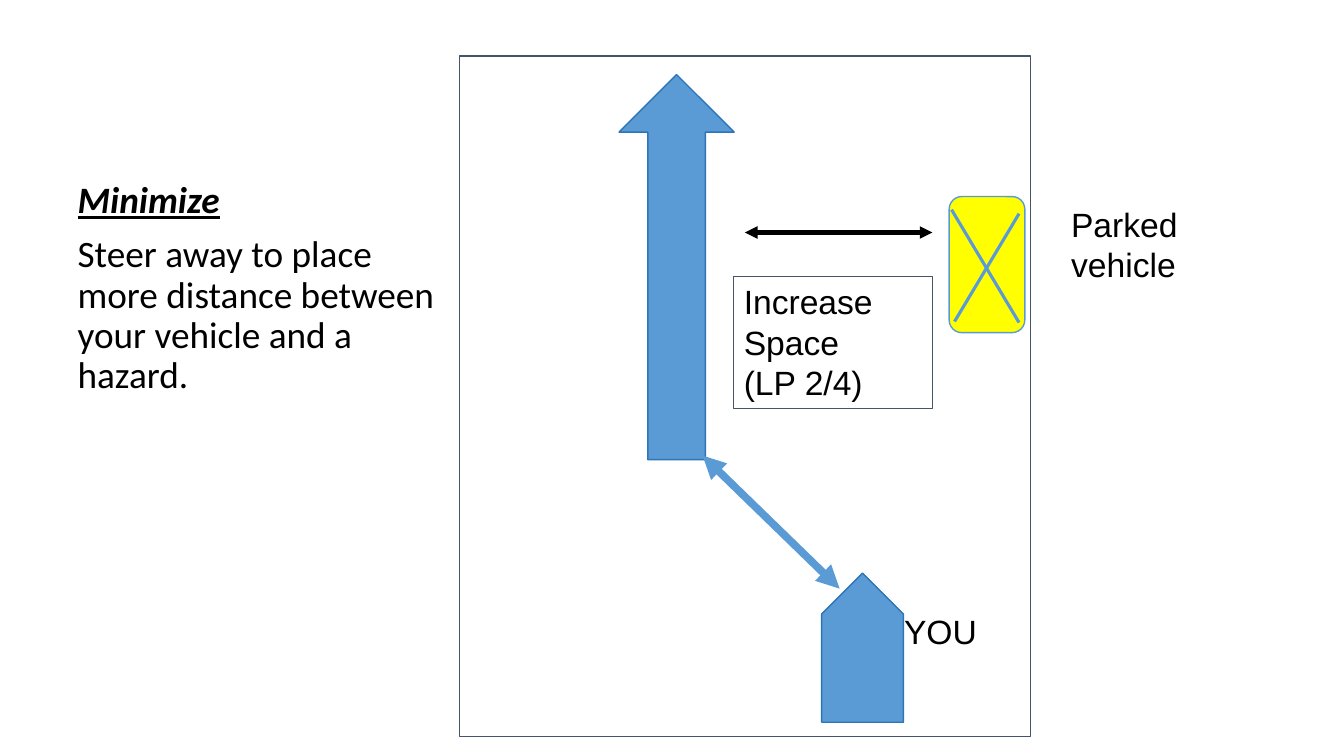
"""Builds a driving slide on minimizing a hazard by steering away from a parked vehicle."""
from pptx import Presentation
from pptx import util as u
from pptx.dml.color import RGBColor
from pptx.enum import shapes, text
from pptx.oxml.ns import qn
from lxml import etree

COLORS = {"white": "FFFFFF", "black": "000000", "yellow": "FFFF00",
          "blue": "5B9BD5", "edge": "2E75B6", "slate": "44546A"}
COLORS = {name: RGBColor.from_string(value) for name, value in COLORS.items()}
COLUMNS, ROWS = 160, 90

deck = Presentation()
deck.slide_width, deck.slide_height = u.Inches(13.33), u.Inches(7.5)
column, row = deck.slide_width / COLUMNS, deck.slide_height / ROWS
page = deck.slides.add_slide(deck.slide_layouts[1])
title = page.shapes.title
title.element.getparent().remove(title.element)


def cells(*lengths):
    """Turns alternating columns and rows into slide lengths."""
    return [round(n * (row if i % 2 else column)) for i, n in enumerate(lengths)]


def write(box, lines, font, size, margins=(0.1, 0.05)):
    """Fills a box with left-aligned black paragraphs."""
    frame = box.text_frame
    frame.word_wrap = True
    frame.vertical_anchor = text.MSO_ANCHOR.TOP
    frame.margin_left = frame.margin_right = u.Inches(margins[0])
    frame.margin_top = frame.margin_bottom = u.Inches(margins[1])
    frame.text = "\n".join(lines)
    for para in frame.paragraphs:
        para.alignment = text.PP_ALIGN.LEFT
        for span in para.runs:
            span.font.name, span.font.size = font, u.Pt(size)
            span.font.color.rgb = COLORS["black"]
    return frame


body = page.placeholders[1]
body.left, body.top, body.width, body.height = cells(8.04, 21, 48, 62.64)
advice = write(body, ["Minimize",
                      "Steer away to place more distance between your vehicle and a hazard."],
               "Calibri", 26.6)
advice.auto_size = text.MSO_AUTO_SIZE.NONE
for index, para in enumerate(advice.paragraphs):
    properties = para._p.get_or_add_pPr()
    properties.set("marL", "0")
    properties.set("indent", "0")
    etree.SubElement(properties, qn("a:buNone"))
    para.line_spacing = 0.9
    para.space_before = u.Pt(10 * index)
heading = advice.paragraphs[0].runs[0].font
heading.bold = heading.italic = heading.underline = True

kinds = shapes.MSO_SHAPE
drawn = {}
for name, kind, place, fill, line, width, turn in [
    ("road", kinds.RECTANGLE, (54.68, 6.65, 68.04, 81), "white", "slate", 1, 0),
    ("parked vehicle", kinds.ROUNDED_RECTANGLE, (113, 23.4, 9, 16.2), "yellow", "blue", 1, 0),
    ("your vehicle", kinds.PENTAGON, (93.8, 72.24, 17.76, 9.72), "blue", "edge", 1, 270),
    ("route", kinds.UP_ARROW, (73.7, 8.88, 13.7, 45.84), "blue", "edge", 1, 0),
    ("space", kinds.RECTANGLE, (87.36, 32.88, 23.64, 15.72), "white", "slate", 0.75, 0),
]:
    shape = page.shapes.add_shape(kind, *cells(*place))
    shape.rotation = turn
    shape.shadow.inherit = False
    shape.fill.solid()
    shape.fill.fore_color.rgb = COLORS[fill]
    shape.line.color.rgb, shape.line.width = COLORS[line], u.Pt(width)
    drawn[name] = shape
write(drawn["space"], ["Increase Space", "(LP 2/4)"], "Arial", 24)

steering = (99.96, 70.08, 83.64, 54.24)
cross_rising = (121.32, 25.44, 113.64, 38.28)
cross_falling = (113.28, 24.96, 121.32, 38.4)
distance = (111, 27.68, 88.68, 27.68)
for ends, color, width, arrows in [
    (steering, "blue", 5.5, True),
    (cross_rising, "blue", 2.25, False),
    (cross_falling, "blue", 2.25, False),
    (distance, "black", 3, True),
]:
    line = page.shapes.add_connector(shapes.MSO_CONNECTOR.STRAIGHT, *cells(*ends))
    line.line.color.rgb, line.line.width = COLORS[color], u.Pt(width)
    if arrows:
        for end in ("a:headEnd", "a:tailEnd"):
            etree.SubElement(line.line._get_or_add_ln(), qn(end), type="triangle")
    etree.SubElement(line.element.spPr, qn("a:effectLst"))

for label, place, margins in [
    ("Parked vehicle", (125.95, 23.4, 15.96, 11.28), (0.13, 0.07)),
    ("YOU", (106.44, 72.12, 18.36, 6), (0.1, 0.05)),
]:
    box = page.shapes.add_textbox(*cells(*place))
    write(box, [label], "Arial", 24, margins)

deck.save("out.pptx")
